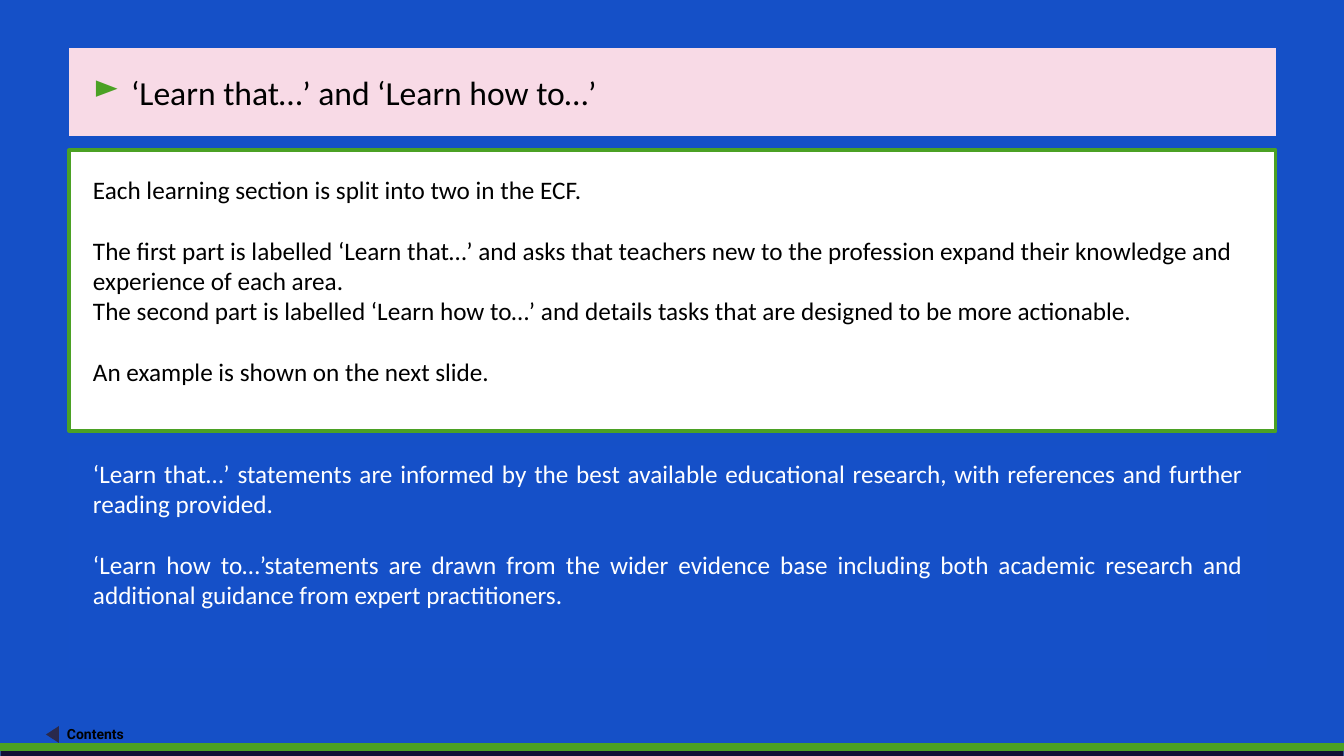
from dataclasses import dataclass

from lxml import etree
from pptx import Presentation
from pptx import util as u
from pptx.dml.color import RGBColor
from pptx.enum import shapes, text
from pptx.oxml.ns import qn

EMU_PER_PX = 914400 / 100.8
SLIDE_WIDTH, SLIDE_HEIGHT = 1344, 756
LEFT, PANEL_WIDTH = 69, 1207
PARAGRAPH_GAP = 22


@dataclass(frozen=True)
class Theme:
    blue: str = "1550C7"
    lower_blue: str = "1550C8"
    pink: str = "F8DAE6"
    green: str = "4BA124"
    navy: str = "120E35"
    bar_outline: str = "31538F"
    arrow: str = "2A294C"
    white: str = "FFFFFF"
    black: str = "000000"
    body_font: str = "Calibri"
    link_font: str = "Roboto"
    title_size: int = 24
    body_size: int = 18
    link_size: int = 10


THEME = Theme()


def px(value):
    return u.Emu(round(value * EMU_PER_PX))


def rgb(value):
    return RGBColor.from_string(value)


def place(shape, left, top, width, height):
    shape.left, shape.top = px(left), px(top)
    shape.width, shape.height = px(width), px(height)


def paint(shape, fill, line=None, line_width=1):
    shape.fill.solid()
    shape.fill.fore_color.rgb = rgb(fill)
    if line:
        shape.line.color.rgb = rgb(line)
        shape.line.width = u.Pt(line_width)
    else:
        shape.line.fill.background()


def add_block(slide, kind, box, fill, line=None, line_width=1):
    shape = slide.shapes.add_shape(kind, *map(px, box))
    shape.shadow.inherit = False
    paint(shape, fill, line, line_width)
    return shape


def set_frame(shape, side=0, top=0, bottom=0):
    frame = shape.text_frame
    frame.word_wrap = True
    frame.auto_size = text.MSO_AUTO_SIZE.NONE
    frame.vertical_anchor = text.MSO_ANCHOR.TOP
    frame.margin_left = frame.margin_right = px(side)
    frame.margin_top, frame.margin_bottom = px(top), px(bottom)
    return frame


def add_run(paragraph, words, size, color, font=THEME.body_font, bold=False):
    run = paragraph.add_run()
    run.text = words
    run.font.name = font
    run.font.size = u.Pt(size)
    run.font.bold = bold
    run.font.color.rgb = rgb(color)


def add_paragraphs(frame, items, color, alignment):
    """Write (gap before in points, words) items as body paragraphs."""
    for index, (gap, words) in enumerate(items):
        paragraph = frame.add_paragraph() if index else frame.paragraphs[0]
        paragraph.alignment = alignment
        paragraph.space_before = u.Pt(gap)
        add_run(paragraph, words, THEME.body_size, color)


def set_bullet(paragraph, symbol, color, indent):
    properties = paragraph._p.get_or_add_pPr()
    properties.set("marL", str(px(indent)))
    properties.set("indent", str(-px(indent)))
    bullet_color = etree.SubElement(properties, qn("a:buClr"))
    etree.SubElement(bullet_color, qn("a:srgbClr"), val=color)
    etree.SubElement(properties, qn("a:buChar"), char=symbol)


def add_title(slide, words):
    title = slide.shapes.title
    place(title, LEFT, 48, PANEL_WIDTH, 88)
    paint(title, THEME.pink)
    paragraph = set_frame(title, side=24, top=24, bottom=12).paragraphs[0]
    paragraph.alignment = text.PP_ALIGN.JUSTIFY
    set_bullet(paragraph, "►", THEME.green, 38)
    add_run(paragraph, words, THEME.title_size, THEME.black)


def add_contents_link(slide):
    arrow = add_block(slide, shapes.MSO_SHAPE.ISOSCELES_TRIANGLE, (44, 728, 17, 13), THEME.arrow)
    arrow.rotation = 270
    label = slide.shapes.add_textbox(*map(px, (67, 726, 113, 17)))
    paragraph = set_frame(label).paragraphs[0]
    add_run(paragraph, "Contents", THEME.link_size, THEME.black, THEME.link_font, bold=True)


def add_footer_bars(slide):
    for height, fill, line in ((18, THEME.navy, THEME.bar_outline), (6, THEME.green, THEME.green)):
        add_block(slide, shapes.MSO_SHAPE.RECTANGLE, (0, 744, SLIDE_WIDTH, height), fill, line)


def add_evidence_panel(slide):
    panel = add_block(slide, shapes.MSO_SHAPE.RECTANGLE, (LEFT, 446, 1198, 222), THEME.lower_blue)
    add_paragraphs(set_frame(panel, side=24, top=12, bottom=12), [
        (0, "‘Learn that…’ statements are informed by the best available educational research, "
            "with references and further reading provided."),
        (PARAGRAPH_GAP, "‘Learn how to…’statements are drawn from the wider evidence base including "
                        "both academic research and additional guidance from expert practitioners."),
    ], THEME.white, text.PP_ALIGN.JUSTIFY)


def add_sections_panel(slide):
    panel = add_block(slide, shapes.MSO_SHAPE.RECTANGLE, (LEFT, 150, PANEL_WIDTH, 281),
                      THEME.white, THEME.green, 2.25)
    add_paragraphs(set_frame(panel, side=24, top=24, bottom=12), [
        (0, "Each learning section is split into two in the ECF."),
        (PARAGRAPH_GAP, "The first part is labelled ‘Learn that…’ and asks that teachers new to the "
                        "profession expand their knowledge and experience of each area."),
        (0, "The second part is labelled ‘Learn how to…’ and details tasks that are designed "
            "to be more actionable."),
        (PARAGRAPH_GAP, "An example is shown on the next slide."),
    ], THEME.black, text.PP_ALIGN.LEFT)


def main():
    presentation = Presentation()
    presentation.slide_width, presentation.slide_height = px(SLIDE_WIDTH), px(SLIDE_HEIGHT)
    slide = presentation.slides.add_slide(presentation.slide_layouts.get_by_name("Title Only"))
    slide.background.fill.solid()
    slide.background.fill.fore_color.rgb = rgb(THEME.blue)
    add_title(slide, "‘Learn that…’ and ‘Learn how to…’")
    add_contents_link(slide)
    add_footer_bars(slide)
    add_evidence_panel(slide)
    add_sections_panel(slide)
    presentation.save("out.pptx")


if __name__ == "__main__":
    main()
